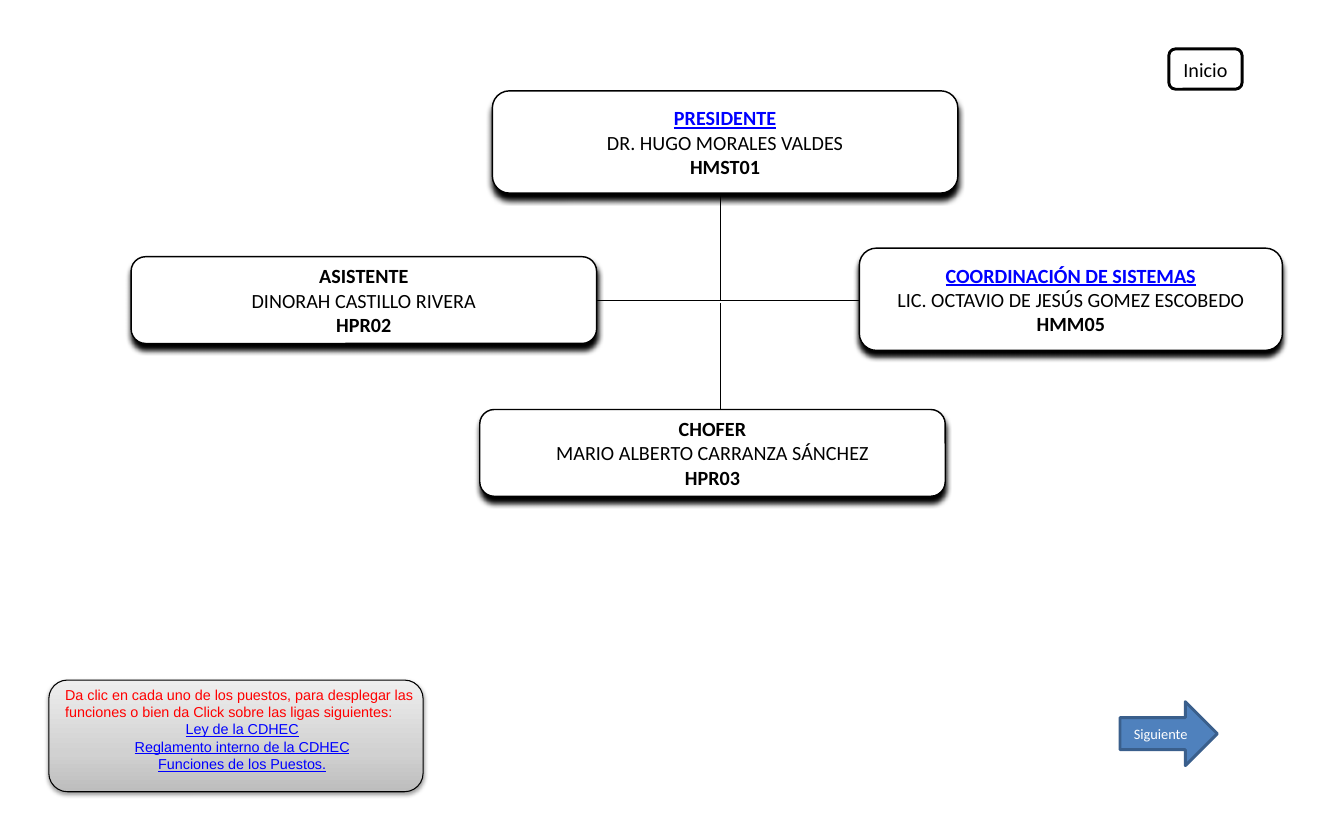
from lxml.etree import SubElement
from pptx import Presentation
from pptx.dml.color import RGBColor
from pptx.enum.shapes import MSO_CONNECTOR, MSO_SHAPE
from pptx.enum.text import MSO_ANCHOR, PP_ALIGN
from pptx.oxml import parse_xml
from pptx.oxml.ns import nsdecls, qn
from pptx.util import Cm, Pt

COLORS = {
    "white": "FFFFFF", "black": "000000", "link": "0000FF", "notice": "FF0000",
    "arrow": "4F81BD", "arrow_edge": "3A5F8C",
}
PANEL_STOPS = [(0, "BDBDBD"), (35, "D1D1D1"), (100, "EEEEEE")]

POSTS = [
    ("PRESIDENTE", "DR. HUGO MORALES VALDES", "HMST01", True, (12.09, 2.23, 11.43, 2.51)),
    ("ASISTENTE", "DINORAH CASTILLO RIVERA", "HPR02", False, (3.22, 6.3, 11.43, 2.13)),
    ("CHOFER", "MARIO ALBERTO CARRANZA SÁNCHEZ", "HPR03", False, (11.78, 10.05, 11.43, 2.13)),
    ("COORDINACIÓN DE SISTEMAS", "LIC. OCTAVIO DE JESÚS GOMEZ ESCOBEDO", "HMM05", True,
     (21.1, 6.09, 10.39, 2.51)),
]
BRANCHES = [
    (17.69, 4.8, 17.69, 7.39),
    (14.65, 7.37, 21.1, 7.37),
    (17.69, 7.44, 17.69, 10.05),
]
BUTTONS = [
    ("Inicio", MSO_SHAPE.ROUNDED_RECTANGLE, (28.7, 1.2, 1.8, 0.99), "white", "black", "black", 14),
    ("Siguiente", MSO_SHAPE.RIGHT_ARROW, (27.5, 17.22, 2.39, 1.57), "arrow", "arrow_edge", "white", 10),
]
PANEL_AT = (1.2, 16.69, 9.19, 2.74)
NOTICE_AT = (1.35, 16.71, 9.19, 2.39)
NOTICE = ("Da clic en cada uno de los puestos, para desplegar las funciones "
          "o bien da Click sobre las ligas siguientes:")
LINKS = ["Ley de la CDHEC", "Reglamento interno de la CDHEC", "Funciones de los Puestos."]

POST_FRAME = {
    "word_wrap": False, "vertical_anchor": MSO_ANCHOR.MIDDLE,
    "margin_left": Cm(0.43), "margin_right": Cm(0.43),
    "margin_top": Cm(0.23), "margin_bottom": Cm(0.23),
}
BUTTON_FRAME = {"word_wrap": True, "vertical_anchor": MSO_ANCHOR.MIDDLE}
NOTICE_FRAME = {"word_wrap": True, "vertical_anchor": MSO_ANCHOR.TOP}


def rgb(color):
    return RGBColor.from_string(COLORS[color])


def apply(target, values):
    for name, value in values.items():
        setattr(target, name, value)


def write(frame, lines, frame_format):
    apply(frame, frame_format)
    for index, (text, color, align, font) in enumerate(lines):
        paragraph = frame.add_paragraph() if index else frame.paragraphs[0]
        paragraph.alignment = align
        run = paragraph.add_run()
        run.text = text
        apply(run.font, font)
        run.font.color.rgb = rgb(color)


def outlined(slide, kind, at, fill, edge, width):
    shape = slide.shapes.add_shape(kind, *map(Cm, at))
    if fill:
        shape.fill.solid()
        shape.fill.fore_color.rgb = rgb(fill)
    shape.line.color.rgb = rgb(edge)
    shape.line.width = Pt(width)
    shape.shadow.inherit = False
    return shape


def cast_shadow(shape, opacity, blur, distance):
    effects = shape._element.spPr.find(qn("a:effectLst"))
    shadow = SubElement(effects, qn("a:outerShdw"), blurRad=str(Pt(blur)), dist=str(Pt(distance)),
                        dir="5400000", algn="ctr", rotWithShape="0")
    color = SubElement(shadow, qn("a:srgbClr"), val=COLORS["black"])
    SubElement(color, qn("a:alpha"), val=str(opacity * 1000))


def shade(shape, stops):
    marks = "".join(f'<a:gs pos="{pos * 1000}"><a:srgbClr val="{color}"/></a:gs>' for pos, color in stops)
    gradient = parse_xml(f'<a:gradFill {nsdecls("a")} rotWithShape="1"><a:gsLst>{marks}</a:gsLst>'
                         '<a:lin ang="16200000" scaled="0"/></a:gradFill>')
    shape._element.spPr.find(qn("a:prstGeom")).addnext(gradient)


def add_branch(slide, ends):
    branch = slide.shapes.add_connector(MSO_CONNECTOR.STRAIGHT, *map(Cm, ends))
    branch.line.color.rgb = rgb("black")
    branch.line.width = Pt(0.75)
    SubElement(branch._element.spPr, qn("a:effectLst"))


def add_post(slide, role, person, code, linked, at):
    post = outlined(slide, MSO_SHAPE.ROUNDED_RECTANGLE, at, "white", "black", 1)
    cast_shadow(post, 100, 4, 4)
    plain = {"name": "Calibri", "size": Pt(14), "bold": False}
    strong = {**plain, "bold": True}
    write(post.text_frame, [
        (role, "link" if linked else "black", PP_ALIGN.CENTER, {**strong, "underline": linked}),
        (person, "black", PP_ALIGN.CENTER, plain),
        (code, "black", PP_ALIGN.CENTER, strong),
    ], POST_FRAME)


def add_notice(slide):
    panel = outlined(slide, MSO_SHAPE.ROUNDED_RECTANGLE, PANEL_AT, None, "black", 0.75)
    shade(panel, PANEL_STOPS)
    cast_shadow(panel, 38, 3.1, 1.6)
    font = {"name": "Arial", "size": Pt(10)}
    lines = [(NOTICE, "notice", PP_ALIGN.LEFT, font)]
    lines += [(link, "link", PP_ALIGN.CENTER, {**font, "underline": True}) for link in LINKS]
    write(slide.shapes.add_textbox(*map(Cm, NOTICE_AT)).text_frame, lines, NOTICE_FRAME)


def main():
    deck = Presentation()
    apply(deck, {"slide_width": Cm(33), "slide_height": Cm(20)})
    slide = deck.slides.add_slide(deck.slide_layouts[6])
    for ends in BRANCHES:
        add_branch(slide, ends)
    for post in POSTS:
        add_post(slide, *post)
    for label, kind, at, fill, edge, ink, size in BUTTONS:
        button = outlined(slide, kind, at, fill, edge, 2)
        font = {"name": "Calibri", "size": Pt(size)}
        write(button.text_frame, [(label, ink, PP_ALIGN.CENTER, font)], BUTTON_FRAME)
    add_notice(slide)
    deck.save("out.pptx")


if __name__ == "__main__":
    main()
